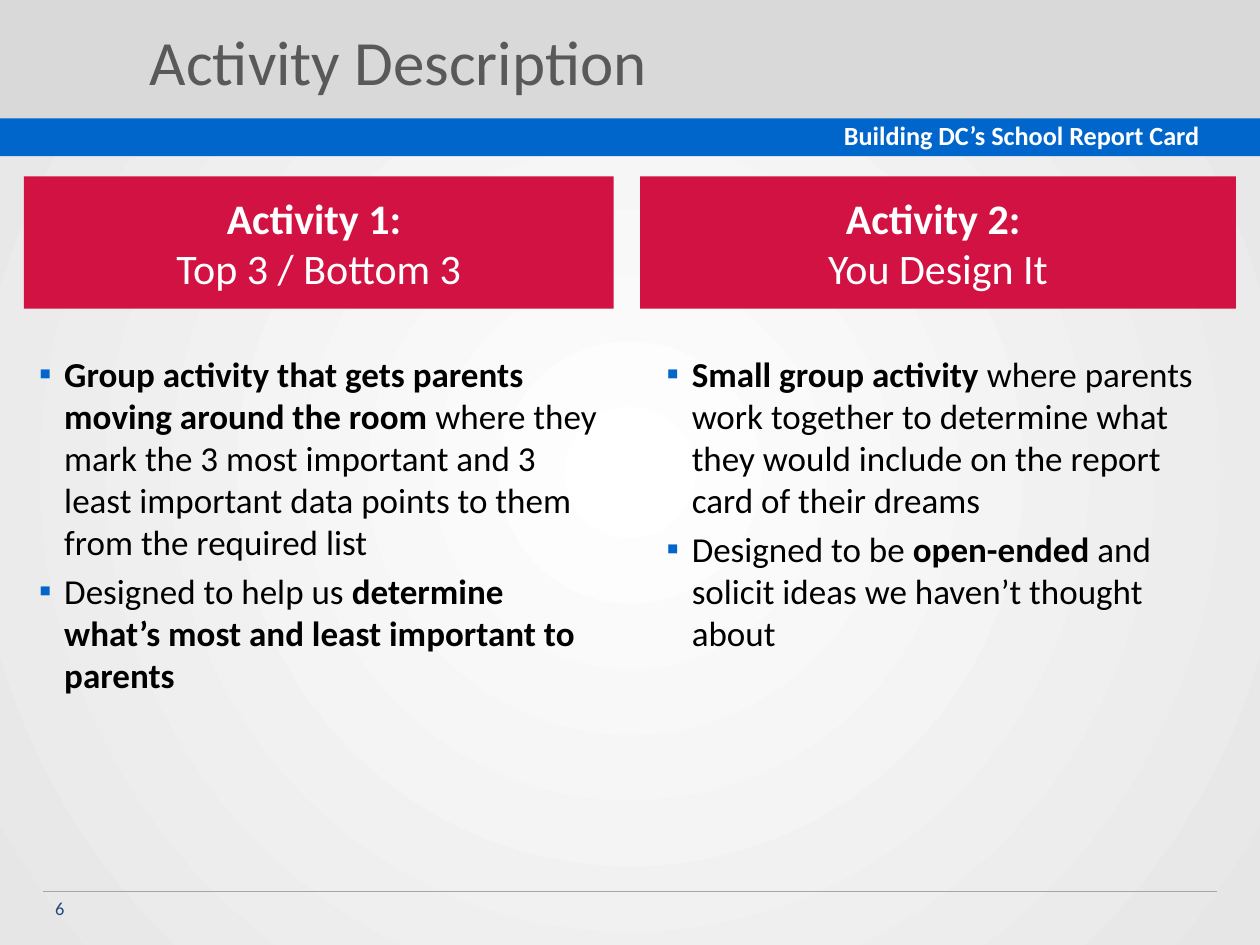
from lxml.etree import SubElement
from pptx import Presentation
from pptx.dml.color import RGBColor
from pptx.enum.shapes import MSO_CONNECTOR, MSO_SHAPE
from pptx.enum.text import MSO_ANCHOR as Anchor, MSO_AUTO_SIZE as AutoSize, PP_ALIGN as Align
from pptx.oxml.ns import qn
from pptx.util import Inches, Pt

WHITE = RGBColor(0xFF, 0xFF, 0xFF)
BLACK = RGBColor(0x00, 0x00, 0x00)
EDGE_GRAY = RGBColor(0xE6, 0xE6, 0xE6)
HEADER_GRAY = RGBColor(0xD9, 0xD9, 0xD9)
TITLE_GRAY = RGBColor(0x59, 0x59, 0x59)
RULE_GRAY = RGBColor(0xA6, 0xA6, 0xA6)
BLUE = RGBColor(0x00, 0x66, 0xCC)
NAVY = RGBColor(0x1F, 0x49, 0x7D)
RED = RGBColor(0xD1, 0x12, 0x42)

WIDTH, HEIGHT = 10, 7.5
MARGIN = 0.34
FOOTER_TOP = 7.07
CARD_TOP, CARD_HEIGHT = 1.4, 1.05
LIST_TOP, LIST_HEIGHT = 2.75, 4.02
INDENT = 0.2

# Each column: card and list as (left, width), card lines, list items as (text, bold) runs
COLUMNS = [
    {"card": (0.19, 4.68), "list": (0.21, 4.69),
     "heading": "Activity 1: ", "name": "Top 3 / Bottom 3",
     "items": [
         [("Group activity that gets parents moving around the room ", True),
          ("where they mark the 3 most important and 3 least important data points "
           "to them from the required list", False)],
         [("Designed to help us ", False),
          ("determine what’s most and least important to parents", True)]]},
    {"card": (5.08, 4.73), "list": (5.19, 4.54),
     "heading": "Activity 2: ", "name": "You Design It",
     "items": [
         [("Small group activity ", True),
          ("where parents work together to determine what they would include "
           "on the report card of their dreams", False)],
         [("Designed to be ", False), ("open-ended", True),
          (" and solicit ideas we haven’t thought about", False)]]},
]


def add_run(paragraph, text, size, color, bold=False):
    run = paragraph.add_run()
    run.text = text
    run.font.color.rgb = color
    font_format = {"name": "Calibri", "size": Pt(size), "bold": bold}
    for name, value in font_format.items():
        setattr(run.font, name, value)


def place(shape, left, top, width, height):
    box = {"left": left, "top": top, "width": width, "height": height}
    for name, value in box.items():
        setattr(shape, name, Inches(value))


def set_background(slide):
    fill = slide.background.fill
    fill.gradient()
    for stop, color, position in zip(fill.gradient_stops, (WHITE, EDGE_GRAY), (0, 1)):
        stop.color.rgb = color
        stop.position = position
    # Radial instead of linear
    linear = slide.element.find(".//" + qn("a:lin"))
    gradient = linear.getparent()
    gradient.remove(linear)
    circle = SubElement(gradient, qn("a:path"), path="circle")
    SubElement(circle, qn("a:fillToRect"), {side: "50000" for side in "ltrb"})


def add_block(slide, left, top, width, height, color):
    block = slide.shapes.add_shape(
        MSO_SHAPE.RECTANGLE, *map(Inches, (left, top, width, height)))
    block.shadow.inherit = False
    block.fill.solid()
    block.fill.fore_color.rgb = color
    block.line.fill.background()
    return block


def add_rule(slide, top):
    rule = slide.shapes.add_connector(
        MSO_CONNECTOR.STRAIGHT, *map(Inches, (MARGIN, top, WIDTH - MARGIN, top)))
    rule.line.color.rgb = RULE_GRAY
    rule.line.width = Pt(0.25)
    SubElement(rule.element.spPr, qn("a:effectLst"))


def add_label(slide, box, text, size, color, bold=False):
    label = slide.shapes.add_textbox(*map(Inches, box))
    label.text_frame.word_wrap = True
    add_run(label.text_frame.paragraphs[0], text, size, color, bold)


def fill_title(title, text):
    place(title, 1.09, 0.12, 4.19, 0.71)
    frame = title.text_frame
    frame.word_wrap = False
    frame.auto_size = AutoSize.SHAPE_TO_FIT_TEXT
    paragraph = frame.paragraphs[0]
    paragraph.alignment = Align.LEFT
    add_run(paragraph, text, 36, TITLE_GRAY)


def add_card(slide, column):
    left, width = column["card"]
    card = add_block(slide, left, CARD_TOP, width, CARD_HEIGHT, RED)
    frame = card.text_frame
    frame.vertical_anchor = Anchor.MIDDLE
    lines = (frame.paragraphs[0], column["heading"], True), (frame.add_paragraph(), column["name"], False)
    for paragraph, text, bold in lines:
        paragraph.alignment = Align.CENTER
        add_run(paragraph, text, 24, WHITE, bold)


def set_bullet(paragraph):
    properties = paragraph._p.get_or_add_pPr()
    properties.set("marL", str(Inches(INDENT)))
    properties.set("indent", str(-Inches(INDENT)))
    color = SubElement(properties, qn("a:buClr"))
    SubElement(color, qn("a:srgbClr"), val=str(BLUE))
    SubElement(properties, qn("a:buFont"), typeface="Calibri")
    SubElement(properties, qn("a:buChar"), char="▪")


def fill_list(body, column):
    left, width = column["list"]
    place(body, left, LIST_TOP, width, LIST_HEIGHT)
    frame = body.text_frame
    frame.auto_size = AutoSize.NONE
    for index, runs in enumerate(column["items"]):
        paragraph = frame.add_paragraph() if index else frame.paragraphs[0]
        paragraph.space_before = Pt(4)
        set_bullet(paragraph)
        for text, bold in runs:
            add_run(paragraph, text, 20, BLACK, bold)


def main():
    presentation = Presentation()
    presentation.slide_width = Inches(WIDTH)
    presentation.slide_height = Inches(HEIGHT)
    slide = presentation.slides.add_slide(presentation.slide_layouts[3])
    title, *bodies = slide.placeholders
    set_background(slide)

    # Header band and blue strip, with the band behind the title
    band = add_block(slide, 0, 0, WIDTH, 1.01, HEADER_GRAY)
    title.element.addprevious(band.element)
    add_block(slide, 0, 0.94, WIDTH, 0.3, BLUE)
    add_label(slide, (6.6, 0.9, 3.4, 0.35), "Building DC’s School Report Card", 15, WHITE, bold=True)
    fill_title(title, "Activity Description")

    # Activity columns
    for body, column in zip(bodies, COLUMNS):
        add_card(slide, column)
        fill_list(body, column)

    # Footer
    add_rule(slide, FOOTER_TOP)
    add_label(slide, (MARGIN, FOOTER_TOP, 2.33, 0.4), "6", 10.5, NAVY)

    presentation.save("out.pptx")


if __name__ == "__main__":
    main()
